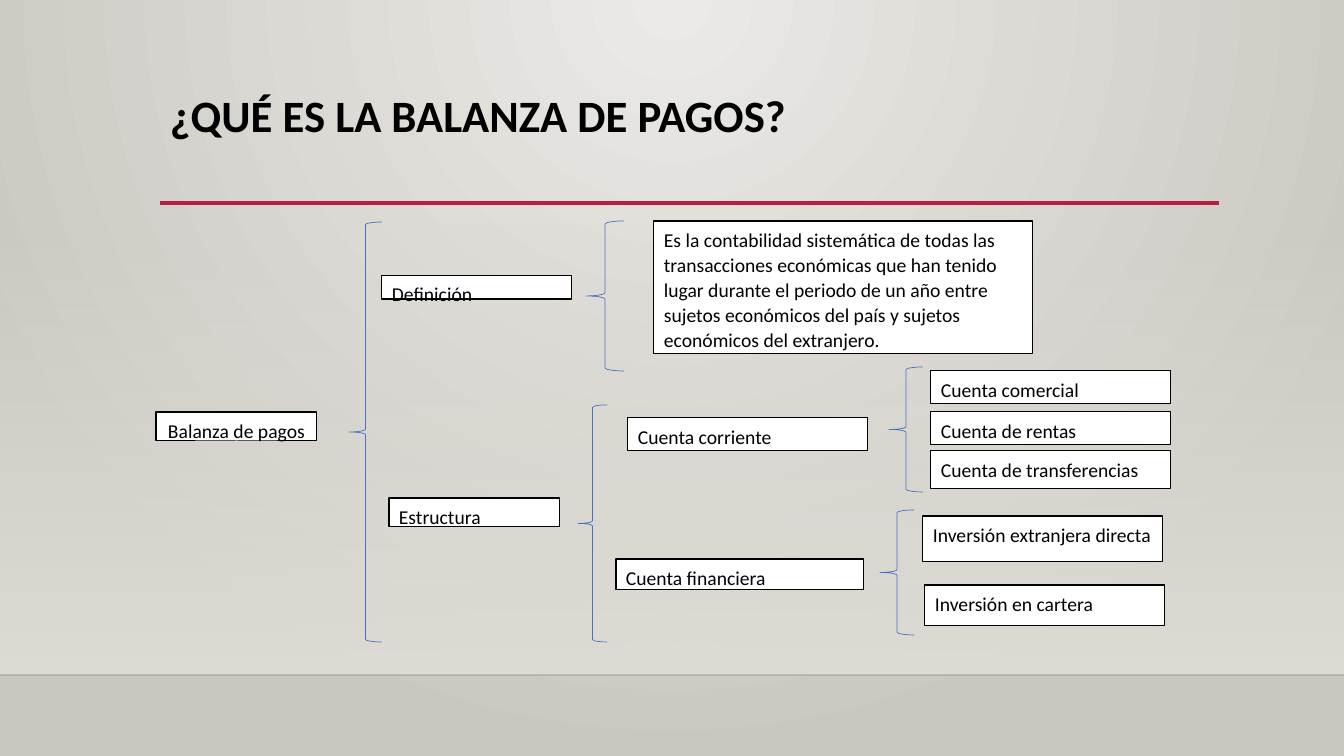
from dataclasses import dataclass

from pptx import Presentation
from pptx.dml.color import RGBColor
from pptx.enum.shapes import MSO_CONNECTOR, MSO_SHAPE as Preset
from pptx.enum.text import MSO_ANCHOR as Anchor, PP_ALIGN as Align
from pptx.oxml import parse_xml
from pptx.oxml.ns import nsdecls, qn
from pptx.util import Emu, Pt

EMU_PER_PX = 12192000 / 1344
WIDTH, HEIGHT = 1344, 756
FONT = "Calibri"
BLACK, WHITE, BLUE, RED = "000000", "FFFFFF", "4472C4", "B71E42"


@dataclass(frozen=True)
class Concept:
    text: str
    left: int
    top: int
    width: int
    height: int
    align: Align = Align.LEFT


@dataclass(frozen=True)
class Brace:
    left: int
    top: int
    width: int
    height: int


CONCEPTS = [
    Concept("Balanza de pagos", 156, 412, 161, 29, Align.CENTER),
    Concept("Definición", 382, 275, 190, 24),
    Concept(
        "Es la contabilidad sistemática de todas las transacciones económicas "
        "que han tenido lugar durante el periodo de un año entre sujetos "
        "económicos del país y sujetos económicos del extranjero.",
        654, 221, 379, 133,
    ),
    Concept("Estructura", 389, 498, 171, 29),
    Concept("Cuenta corriente", 628, 418, 240, 33),
    Concept("Cuenta financiera", 616, 559, 248, 31),
    Concept("Cuenta comercial", 931, 371, 240, 33),
    Concept("Cuenta de rentas", 931, 412, 240, 33),
    Concept("Cuenta de transferencias", 931, 451, 240, 38),
    Concept("Inversión extranjera directa", 923, 516, 240, 46),
    Concept("Inversión en cartera", 925, 585, 240, 41),
]

BRACES = [
    Brace(349, 222, 33, 420),
    Brace(586, 221, 38, 150),
    Brace(578, 405, 29, 237),
    Brace(889, 367, 34, 125),
    Brace(880, 510, 34, 125),
]


def px(value: int) -> Emu:
    return Emu(round(value * EMU_PER_PX))


def color(hex_code: str) -> RGBColor:
    return RGBColor.from_string(hex_code)


def set_alpha(element, percent: int) -> None:
    """Apply opacity to the first colour inside an element."""
    srgb = next(element.iter(qn("a:srgbClr")))
    srgb.append(parse_xml(f'<a:alpha {nsdecls("a")} val="{percent * 1000}"/>'))


def set_gradient(fill, start: str, end: str) -> None:
    fill.gradient()
    for stop, hex_code, position in zip(fill.gradient_stops, (start, end), (0, 1)):
        stop.color.rgb = color(hex_code)
        stop.position = position


def write(shape, text: str, *, size: int = 14, bold: bool = False,
          align: Align = Align.LEFT, spacing: float = 1.07, after: int = 8) -> None:
    frame = shape.text_frame
    frame.word_wrap = True
    frame.vertical_anchor = Anchor.TOP
    paragraph = frame.paragraphs[0]
    paragraph.text = text
    paragraph.alignment = align
    paragraph.line_spacing = spacing
    paragraph.space_after = Pt(after)
    font = paragraph.runs[0].font
    font.name, font.size, font.bold = FONT, Pt(size), bold
    font.color.rgb = color(BLACK)


def draw_line(shapes, left: int, right: int, y: int, hex_code: str, weight: float):
    line = shapes.add_connector(MSO_CONNECTOR.STRAIGHT, px(left), px(y), px(right), px(y))
    line.line.color.rgb = color(hex_code)
    line.line.width = Pt(weight)
    line.element.spPr.append(parse_xml(f'<a:effectLst {nsdecls("a")}/>'))
    return line


def draw_concept(shapes, concept: Concept) -> None:
    box = shapes.add_shape(Preset.RECTANGLE, px(concept.left), px(concept.top),
                           px(concept.width), px(concept.height))
    box.shadow.inherit = False
    box.fill.solid()
    box.fill.fore_color.rgb = color(WHITE)
    box.line.color.rgb = color(BLACK)
    box.line.width = Pt(0.75)
    write(box, concept.text, align=concept.align)


def draw_brace(shapes, brace: Brace) -> None:
    outline = shapes.add_shape(Preset.LEFT_BRACE, px(brace.left), px(brace.top),
                               px(brace.width), px(brace.height))
    outline.shadow.inherit = False
    outline.fill.background()
    outline.line.color.rgb = color(BLUE)
    outline.line.width = Pt(0.5)


def draw_backdrop(slide) -> None:
    # Radial glow from the top centre
    set_gradient(slide.background.fill, "ECEAE7", "CAC7C1")
    linear = next(slide.element.iter(qn("a:lin")))
    linear.getparent().replace(linear, parse_xml(
        f'<a:path {nsdecls("a")} path="circle">'
        '<a:fillToRect l="43000" t="0" r="43000" b="100000"/></a:path>'))

    # Wall fading in towards the floor
    wall = slide.shapes.add_shape(Preset.RECTANGLE, 0, px(223), px(WIDTH), px(452))
    wall.shadow.inherit = False
    wall.line.fill.background()
    set_gradient(wall.fill, "DFDBD5", "DFDBD5")
    wall.fill.gradient_angle = 270
    set_alpha(wall.element.spPr, 0)

    floor_edge = draw_line(slide.shapes, 0, WIDTH, 675, "000001", 1)
    set_alpha(floor_edge.element.spPr, 20)


def main() -> None:
    deck = Presentation()
    deck.slide_width, deck.slide_height = px(WIDTH), px(HEIGHT)
    slide = deck.slides.add_slide(deck.slide_layouts[6])
    draw_backdrop(slide)

    # Heading and its rule
    draw_line(slide.shapes, 160, 1219, 203, RED, 2.5)
    heading = slide.shapes.add_textbox(px(160), px(89), px(1059), px(115))
    write(heading, "¿QUÉ ES LA BALANZA DE PAGOS?", size=32, bold=True,
          spacing=0.9, after=0)

    # Concept map
    for brace in BRACES:
        draw_brace(slide.shapes, brace)
    for concept in CONCEPTS:
        draw_concept(slide.shapes, concept)

    deck.save("out.pptx")


if __name__ == "__main__":
    main()
